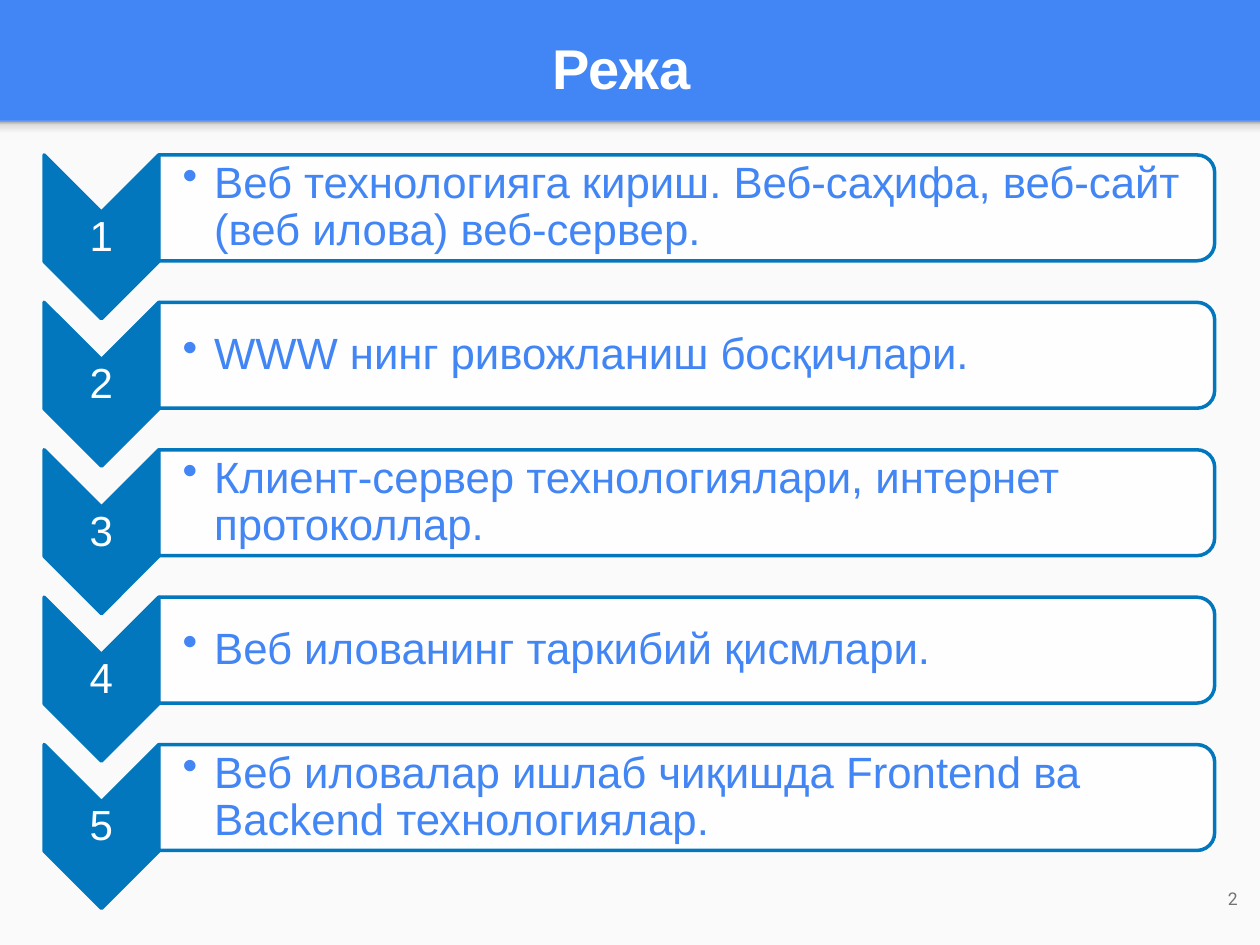
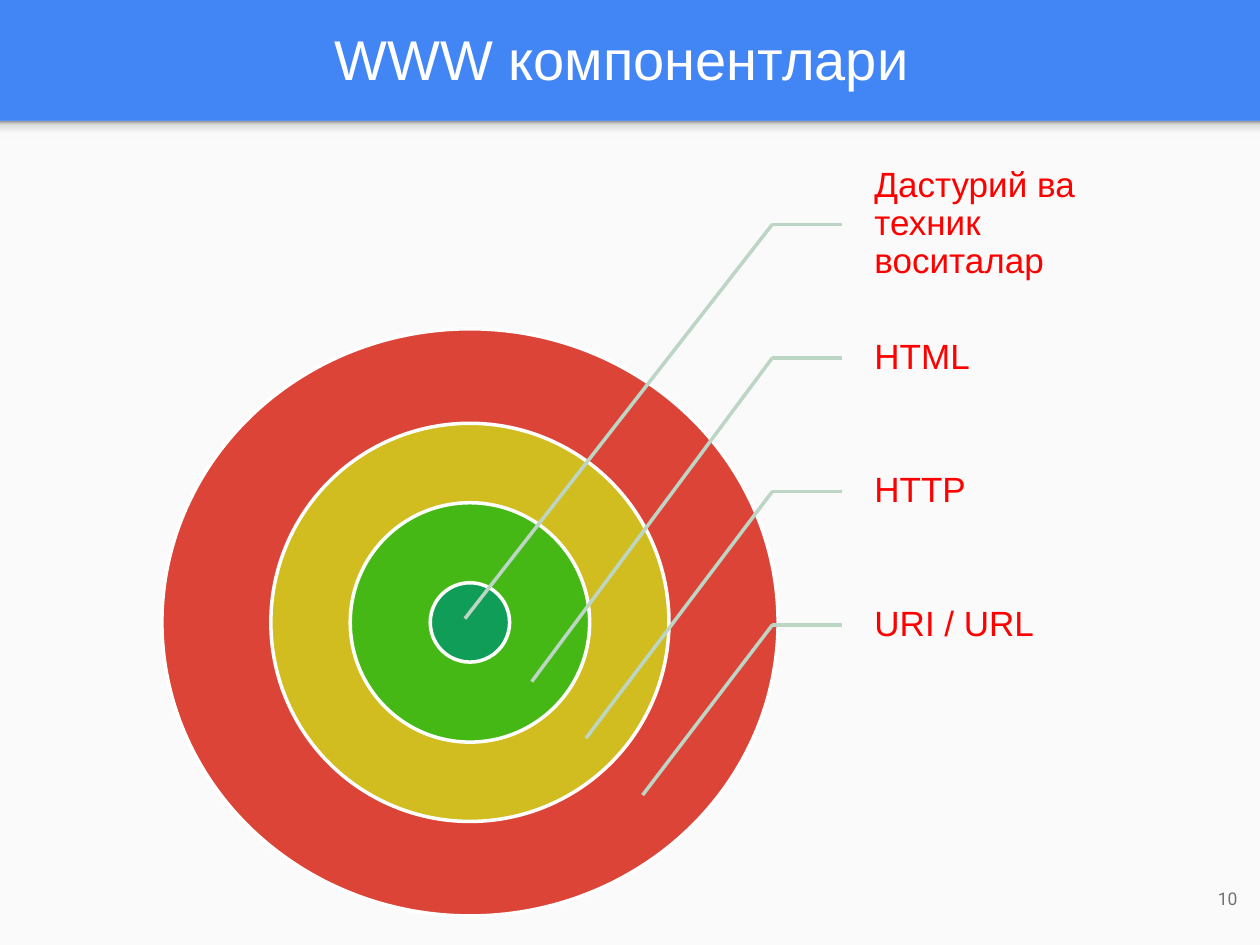
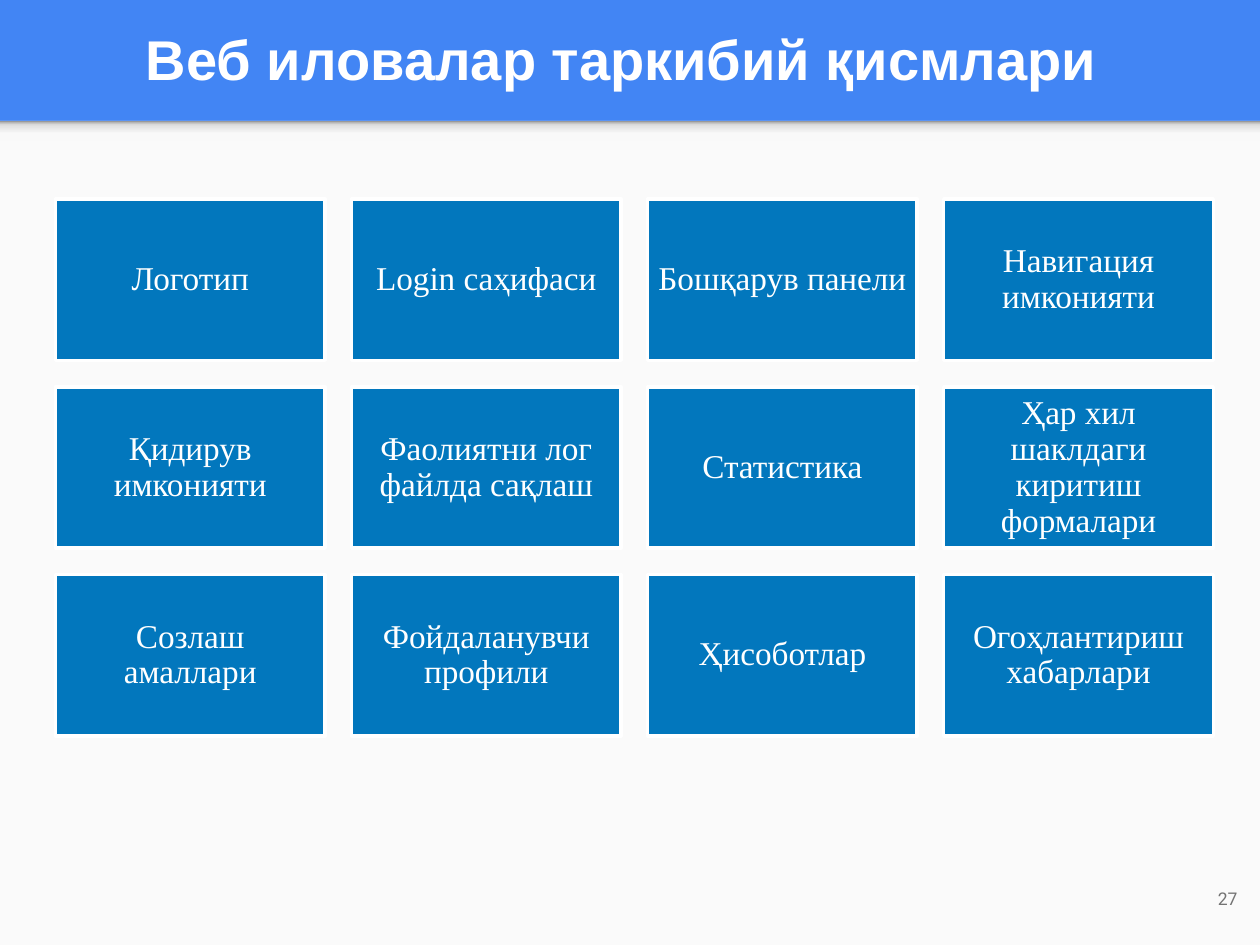
import dataclasses
import lxml.etree
import pptx
import pptx.dml.color
import pptx.enum.dml
import pptx.enum.shapes
import pptx.enum.text
import pptx.oxml.ns
import pptx.util

Inches = pptx.util.Inches
Pt = pptx.util.Pt
qn = pptx.oxml.ns.qn
SHAPE = pptx.enum.shapes.MSO_SHAPE
ALIGN = pptx.enum.text.PP_ALIGN
ANCHOR = pptx.enum.text.MSO_ANCHOR


@dataclasses.dataclass(frozen=True)
class Theme:
    blue: str = "4285F4"
    deep_blue: str = "0277BD"
    paper: str = "FAFAFA"
    white: str = "FFFFFF"
    grey: str = "737373"
    label_red: str = "FF0000"
    leader: str = "BDD5C4"
    rings: tuple = ("DB4437", "D1BD1F", "46B816", "0F9D58")
    band_shade: tuple = ((0, "F9F9F9"), (36, "F9F9F9"), (80, "DEDEDE"), (100, "999999"))
    sans: str = "Arial"
    serif: str = "Times New Roman"
    footer_font: str = "Roboto"
    title_size: int = 32
    plan_size: int = 25
    number_size: int = 24
    label_size: int = 20
    tile_size: int = 19
    footer_size: int = 10
    line_width: int = 2


@dataclasses.dataclass(frozen=True)
class Box:
    left: float
    top: float
    width: float
    height: float

    def inside(self, left, top, width, height):
        return Box(self.left + left, self.top + top, width, height)

    def turned(self):
        shift = (self.width - self.height) / 2
        return Box(self.left + shift, self.top - shift, self.height, self.width)

    def lengths(self):
        return [Inches(value) for value in dataclasses.astuple(self)]


THEME = Theme()
PAGE = Box(0, 0, 10, 7.5)
TITLE = Box(0.11, 0.02, 9.65, 0.88)
PAGE_NUMBER = Box(9.32, 6.85, 0.6, 0.57)


def rgb(color):
    return pptx.dml.color.RGBColor.from_string(color)


def set_all(target, values):
    for name, value in values.items():
        setattr(target, name, value)


def add_figure(page, kind, box, fill, line=None, quarter_turn=False):
    placed = box.turned() if quarter_turn else box
    figure = page.shapes.add_shape(kind, *placed.lengths())
    figure.shadow.inherit = False
    figure.rotation = 90 if quarter_turn else 0
    figure.fill.solid()
    figure.fill.fore_color.rgb = rgb(fill)
    if line:
        figure.line.color.rgb = rgb(line)
        figure.line.width = Pt(THEME.line_width)
    else:
        figure.line.fill.background()
    return figure


def write(shape, text, size, color, font=THEME.sans, bold=False, align=ALIGN.LEFT,
          anchor=ANCHOR.MIDDLE, inset=0.1, left_inset=None, spacing=0.9, bullet=False):
    frame = shape.text_frame
    side = inset if left_inset is None else left_inset
    set_all(frame, {
        "word_wrap": True, "vertical_anchor": anchor,
        "margin_left": Inches(side), "margin_top": Inches(inset),
        "margin_right": Inches(inset), "margin_bottom": Inches(inset),
    })
    para = frame.paragraphs[0]
    set_all(para, {"alignment": align, "line_spacing": spacing})
    if bullet:
        properties = para._p.get_or_add_pPr()
        properties.set("marL", str(Inches(0.25)))
        properties.set("indent", str(-Inches(0.25)))
        lxml.etree.SubElement(properties, qn("a:buChar")).set("char", "•")
    span = para.add_run()
    span.text = text
    set_all(span.font, {"name": font, "size": Pt(size), "bold": bold})
    span.font.color.rgb = rgb(color)


def add_text(page, box, text, size, color, **style):
    write(page.shapes.add_textbox(*box.lengths()), text, size, color, **style)


def add_leader(page, start, end):
    points = [Inches(value) for value in (*start, *end)]
    leader = page.shapes.add_connector(pptx.enum.shapes.MSO_CONNECTOR.STRAIGHT, *points)
    leader.line.color.rgb = rgb(THEME.leader)
    leader.line.width = Pt(THEME.line_width)
    lxml.etree.SubElement(leader._element.spPr, qn("a:effectLst"))


def add_band_shade(page, box):
    shade = add_figure(page, SHAPE.RECTANGLE, box, THEME.white)
    shade.fill.gradient()
    shade.fill.gradient_angle = 90
    stops = next(shade._element.iter(qn("a:gsLst")))
    for stop in list(stops):
        stops.remove(stop)
    for position, color in THEME.band_shade:
        stop = lxml.etree.SubElement(stops, qn("a:gs"))
        stop.set("pos", str(position * 1000))
        lxml.etree.SubElement(stop, qn("a:srgbClr")).set("val", color)


def add_page(deck, title, number, bold=True, anchor=ANCHOR.MIDDLE):
    page = deck.slides.add_slide(deck.slide_layouts[6])
    page.background.fill.solid()
    page.background.fill.fore_color.rgb = rgb(THEME.blue)
    add_figure(page, SHAPE.RECTANGLE, PAGE.inside(0, 0.96, 10, 6.54), THEME.paper)
    add_band_shade(page, PAGE.inside(0, 0.96, 10, 0.16))
    add_text(page, TITLE, title, THEME.title_size, THEME.white, bold=bold,
             align=ALIGN.CENTER, anchor=anchor, spacing=1.0)
    add_text(page, PAGE_NUMBER, str(number), THEME.footer_size, THEME.grey,
             font=THEME.footer_font, align=ALIGN.RIGHT, spacing=1.0)
    return page


def add_plan(page, box, topics):
    arrow_width, arrow_height, panel_height, pitch = 0.91, 1.3, 0.84, 1.17
    panel_width = box.width - arrow_width
    for index, topic in enumerate(topics):
        row = box.inside(0, index * pitch, box.width, arrow_height)
        add_figure(page, SHAPE.CHEVRON, row.inside(0, 0, arrow_width, arrow_height),
                   THEME.deep_blue, THEME.deep_blue, quarter_turn=True)
        add_text(page, row.inside(0, 0.46, arrow_width, 0.39), str(index + 1),
                 THEME.number_size, THEME.white, align=ALIGN.CENTER, inset=0.02)
        panel = add_figure(page, SHAPE.ROUND_2_SAME_RECTANGLE,
                           row.inside(arrow_width, 0, panel_width, panel_height),
                           THEME.white, THEME.deep_blue, quarter_turn=True)
        tint = panel._element.spPr.find(qn("a:solidFill"))[0]
        lxml.etree.SubElement(tint, qn("a:alpha")).set("val", "90000")
        add_text(page, row.inside(arrow_width, 0.04, panel_width - 0.04, 0.76), topic,
                 THEME.plan_size, THEME.blue, inset=0.02, left_inset=0.19, bullet=True)


def add_target(page, box, labels):
    center_x, center_y = 2.45, 3.69
    sizes = ((4.89, 4.66), (3.16, 3.16), (1.9, 1.9), (0.63, 0.63))
    for (width, height), color in zip(sizes, THEME.rings):
        ring = box.inside(center_x - width / 2, center_y - height / 2, width, height)
        add_figure(page, SHAPE.OVAL, ring, color, THEME.white)

    label_height, elbow, label_left = 1.06, 4.85, 5.5
    tips = ((2.41, 3.66), (2.94, 4.16), (3.37, 4.61), (3.82, 5.06))
    for index, (label, (tip_x, tip_y)) in enumerate(zip(labels, tips)):
        top = index * label_height
        bend = (box.left + elbow, box.top + top + label_height / 2)
        add_text(page, box.inside(label_left, top, 2.02, label_height), label,
                 THEME.label_size, THEME.label_red, inset=0.03, left_inset=0.16)
        add_leader(page, bend, (bend[0] + 0.55, bend[1]))
        add_leader(page, bend, (box.left + tip_x, box.top + tip_y))


def add_tiles(page, box, names, columns=4):
    width, height, gap = 2.14, 1.28, 0.21
    for index, name in enumerate(names):
        row, column = divmod(index, columns)
        place = box.inside(column * (width + gap), row * (height + gap), width, height)
        tile = add_figure(page, SHAPE.RECTANGLE, place, THEME.deep_blue, THEME.white)
        write(tile, name, THEME.tile_size, THEME.white, font=THEME.serif,
              align=ALIGN.CENTER, inset=0.08)


def main():
    deck = pptx.Presentation()
    set_all(deck, {"slide_width": Inches(PAGE.width), "slide_height": Inches(PAGE.height)})

    plan = add_page(deck, "Режа", 2, anchor=ANCHOR.BOTTOM)
    add_plan(plan, Box(0.35, 1.23, 9.29, 5.98), (
        "Веб технологияга кириш. Веб-саҳифа, веб-сайт (веб илова) веб-сервер.",
        "WWW нинг ривожланиш босқичлари.",
        "Клиент-сервер технологиялари, интернет протоколлар.",
        "Веб илованинг таркибий қисмлари.",
        "Веб иловалар ишлаб чиқишда Frontend ва Backend технологиялар.",
    ))

    components = add_page(deck, "WWW компонентлари", 10, bold=False)
    add_target(components, Box(1.28, 1.25, 7.52, 6.02),
               ("Дастурий ва техник воситалар", "HTML", "HTTP", "URI / URL"))

    parts = add_page(deck, "Веб иловалар таркибий қисмлари", 27)
    add_tiles(parts, Box(0.44, 1.58, 9.19, 4.27), (
        "Логотип", "Login саҳифаси", "Бошқарув панели", "Навигация имконияти",
        "Қидирув имконияти", "Фаолиятни лог файлда сақлаш", "Статистика",
        "Ҳар хил шаклдаги киритиш формалари",
        "Созлаш амаллари", "Фойдаланувчи профили", "Ҳисоботлар",
        "Огоҳлантириш хабарлари",
    ))
    deck.save("out.pptx")


if __name__ == "__main__":
    main()
